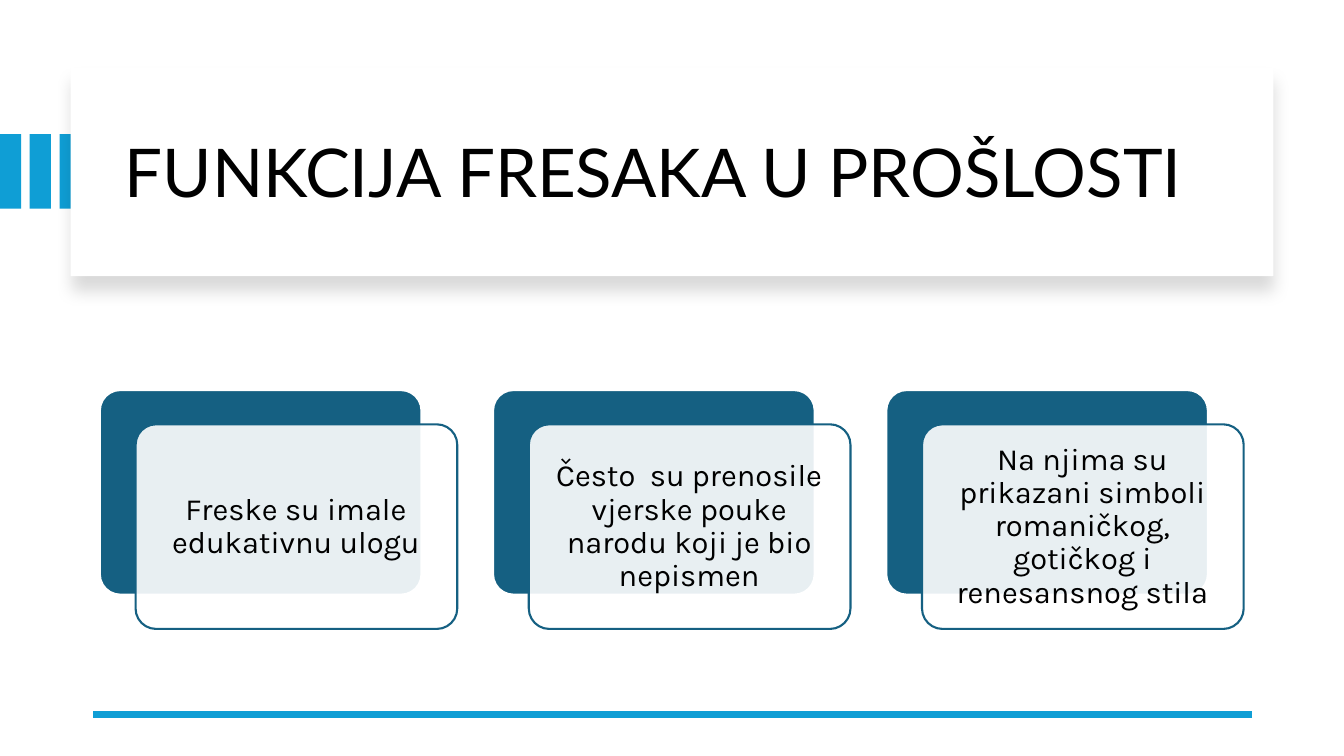
from lxml import etree
from pptx import Presentation
from pptx.dml.color import RGBColor
from pptx.enum import shapes, text
from pptx.oxml.ns import qn
from pptx.util import Inches, Pt

TITLE = "FUNKCIJA FRESAKA U PROŠLOSTI"
CARDS = [
    "Freske su imale edukativnu ulogu",
    "Često  su prenosile vjerske pouke narodu koji je bio nepismen",
    "Na njima su prikazani simboli romaničkog, gotičkog i renesansnog stila",
]
COLORS = {"sky": "0F9ED5", "teal": "156082", "white": "FFFFFF", "black": "000000"}
RECT = shapes.MSO_SHAPE.RECTANGLE
ROUND = shapes.MSO_SHAPE.ROUNDED_RECTANGLE


def tint(name):
    return RGBColor.from_string(COLORS[name])


def add_box(slide, kind, area, fill, line=None):
    box = slide.shapes.add_shape(kind, *map(Inches, area))
    box.shadow.inherit = False
    box.fill.solid()
    box.fill.fore_color.rgb = tint(fill)
    if line:
        box.line.color.rgb = tint(line)
        box.line.width = Pt(1.5)
    else:
        box.line.fill.background()
    if kind == ROUND:
        box.adjustments[0] = 0.1
    return box


def add_text(slide, words, area, font, size, align, inset):
    box = slide.shapes.add_textbox(*map(Inches, area))
    frame = box.text_frame
    frame.word_wrap = True
    frame.vertical_anchor = text.MSO_ANCHOR.MIDDLE
    frame.margin_left = frame.margin_right = Inches(inset)
    frame.text = words
    para = frame.paragraphs[0]
    para.alignment = align
    para.line_spacing = 0.9
    style = para.runs[0].font
    style.name = font
    style.size = Pt(size)
    style.color.rgb = tint("black")


def add_shadow(box):
    effects = box._element.spPr.find(qn("a:effectLst"))
    shade = etree.SubElement(
        effects, qn("a:outerShdw"), blurRad=str(Pt(11)), dist=str(Pt(10)),
        dir="5400000", algn="t", rotWithShape="0")
    color = etree.SubElement(shade, qn("a:srgbClr"), val=COLORS["black"])
    etree.SubElement(color, qn("a:alpha"), val="15000")


def add_header(slide):
    for i in range(3):
        add_box(slide, RECT, (i * 0.295, 1.33, 0.21, 0.74), "sky")
    add_shadow(add_box(slide, RECT, (0.7, 0.67, 11.93, 2.07), "white"))
    add_text(slide, TITLE, (1.14, 0.89, 11.13, 1.7), "Lato", 48,
             text.PP_ALIGN.LEFT, 0.1)


def add_rule(slide):
    rule = slide.shapes.add_connector(
        shapes.MSO_CONNECTOR.STRAIGHT,
        Inches(12.42), Inches(7.09), Inches(0.92), Inches(7.09))
    rule.line.color.rgb = tint("sky")
    rule.line.width = Pt(4.5)
    etree.SubElement(rule._element.spPr, qn("a:effectLst"))


def add_card(slide, words, left):
    top, width, height = 3.87, 3.19, 2.03
    add_box(slide, ROUND, (left, top, width, height), "teal", "white")
    front = add_box(slide, ROUND, (left + 0.355, top + 0.34, width, height),
                    "white", "teal")
    color = front._element.spPr.find(qn("a:solidFill"))[0]
    etree.SubElement(color, qn("a:alpha"), val="90000")
    add_text(slide, words, (left + 0.41, top + 0.4, width - 0.12, height - 0.12),
             "Karla", 22, text.PP_ALIGN.CENTER, 0.09)


def main():
    deck = Presentation()
    deck.slide_width = Inches(13.33)
    deck.slide_height = Inches(7.5)
    slide = deck.slides.add_slide(deck.slide_layouts[6])
    add_header(slide)
    add_rule(slide)
    for i, words in enumerate(CARDS):
        add_card(slide, words, 0.99 + i * 3.9)
    deck.save("out.pptx")


if __name__ == "__main__":
    main()
